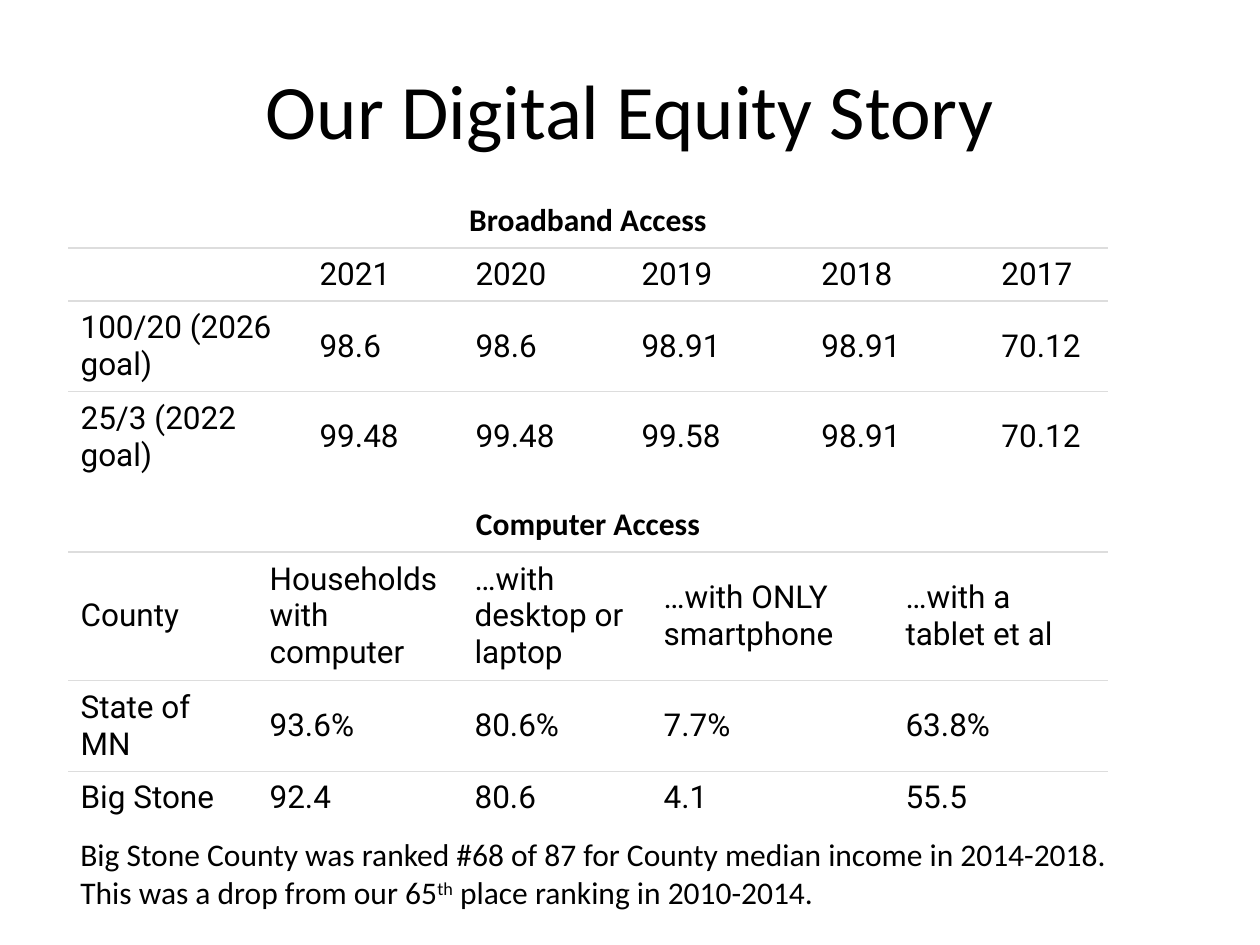
from dataclasses import dataclass

from lxml import etree
from pptx import Presentation
from pptx import util as u
from pptx.dml.color import RGBColor
from pptx.enum import text
from pptx.oxml.ns import qn


@dataclass(frozen=True)
class Theme:
    ink: str = "000000"
    rule: str = "DDDDDD"
    heading_font: str = "Calibri"
    table_font: str = "Roboto"
    title_size: int = 44
    body_size: int = 18
    rule_width: float = 0.75


THEME = Theme()
LEFT, TABLE_WIDTH = 68, 1040
CAPTION_HEIGHT, CAPTION_GAP = 50, 54  # caption height; caption top to table top
PX_PER_INCH = 126

BROADBAND = [
    ["", "2021", "2020", "2019", "2018", "2017"],
    ["100/20 (2026 goal)", "98.6", "98.6", "98.91", "98.91", "70.12"],
    ["25/3 (2022 goal)", "99.48", "99.48", "99.58", "98.91", "70.12"],
]
COMPUTERS = [
    ["County", "Households with computer", "…with desktop or laptop",
     "…with ONLY\nsmartphone", "…with a tablet et al"],
    ["State of MN", "93.6%", "80.6%", "7.7%", "63.8%"],
    ["Big Stone", "92.4", "80.6", "4.1", "55.5"],
]


def px(n):
    return u.Emu(round(n * 914400 / PX_PER_INCH))


def style_text(tf, font, size, bold=False, align=text.PP_ALIGN.LEFT):
    for p in tf.paragraphs:
        p.alignment = align
        p.font.size = u.Pt(size)
        for r in p.runs:
            r.font.name = font
            r.font.size = u.Pt(size)
            r.font.bold = bold
            r.font.color.rgb = RGBColor.from_string(THEME.ink)


def add_title(slide, words):
    sp = slide.shapes.title
    sp.left, sp.top, sp.width, sp.height = px(63), px(38), px(1134), px(141)
    tf = sp.text_frame
    tf.text = words
    tf.vertical_anchor = text.MSO_ANCHOR.MIDDLE
    style_text(tf, THEME.heading_font, THEME.title_size, align=text.PP_ALIGN.CENTER)


def add_text(slide, words, top, width, height, **style):
    sp = slide.shapes.add_textbox(px(LEFT), px(top), px(width), px(height))
    tf = sp.text_frame
    tf.word_wrap = True
    tf.text = words
    style_text(tf, THEME.heading_font, THEME.body_size, **style)
    return tf


def set_borders(cell, ruled):
    """Draw the sides named in ruled and clear the others."""
    tcPr = cell._tc.get_or_add_tcPr()
    for i, side in enumerate(("lnL", "lnR", "lnT", "lnB")):
        ln = etree.Element(qn(f"a:{side}"), w=str(u.Pt(THEME.rule_width)))
        if side in ruled:
            fill = etree.SubElement(ln, qn("a:solidFill"))
            etree.SubElement(fill, qn("a:srgbClr"), val=THEME.rule)
        else:
            etree.SubElement(ln, qn("a:noFill"))
        tcPr.insert(i, ln)


def add_data_table(slide, rows, top, col_widths, row_heights):
    frame = slide.shapes.add_table(len(rows), len(col_widths), px(LEFT), px(top),
                                   px(sum(col_widths)), px(sum(row_heights)))
    table = frame.table
    table.first_row = table.horz_banding = False
    for column, width in zip(table.columns, col_widths):
        column.width = px(width)
    for i, (values, height) in enumerate(zip(rows, row_heights)):
        table.rows[i].height = px(height)
        ruled = ("lnT",) if i == len(rows) - 1 else ("lnT", "lnB")
        for j, value in enumerate(values):
            cell = table.cell(i, j)
            cell.text = value
            cell.vertical_anchor = text.MSO_ANCHOR.MIDDLE
            cell.margin_left = cell.margin_right = u.Inches(0.1)
            cell.margin_top = cell.margin_bottom = u.Inches(0.06)
            cell.fill.background()
            style_text(cell.text_frame, THEME.table_font, THEME.body_size)
            set_borders(cell, ruled)


def add_section(slide, caption, top, rows, col_widths, row_heights):
    add_text(slide, caption, top, TABLE_WIDTH, CAPTION_HEIGHT,
             bold=True, align=text.PP_ALIGN.CENTER)
    add_data_table(slide, rows, top + CAPTION_GAP, col_widths, row_heights)


def add_ranking_note(slide):
    tf = add_text(slide, "", 829, 1097, 89)
    p = tf.paragraphs[0]
    for words in ("Big Stone County was ranked #68 of 87 for County median income in "
                  "2014-2018. This was a drop from our 65",
                  "th", " place ranking in 2010-2014."):
        p.add_run().text = words
    style_text(tf, THEME.heading_font, THEME.body_size)
    p.runs[1].font._element.set("baseline", "30000")  # superscript ordinal


def main():
    prs = Presentation()
    prs.slide_width, prs.slide_height = u.Inches(10), u.Inches(7.5)
    slide = prs.slides.add_slide(prs.slide_layouts[5])

    add_title(slide, "Our Digital Equity Story")

    # Captioned tables
    add_section(slide, "Broadband Access", 194, BROADBAND,
                (239, 156, 166, 180, 180, 119), (53, 90, 90))
    add_section(slide, "Computer Access", 498, COMPUTERS,
                (189, 205, 189, 242, 215), (126, 90, 53))

    # Closing note
    add_ranking_note(slide)

    prs.save("out.pptx")


if __name__ == "__main__":
    main()
